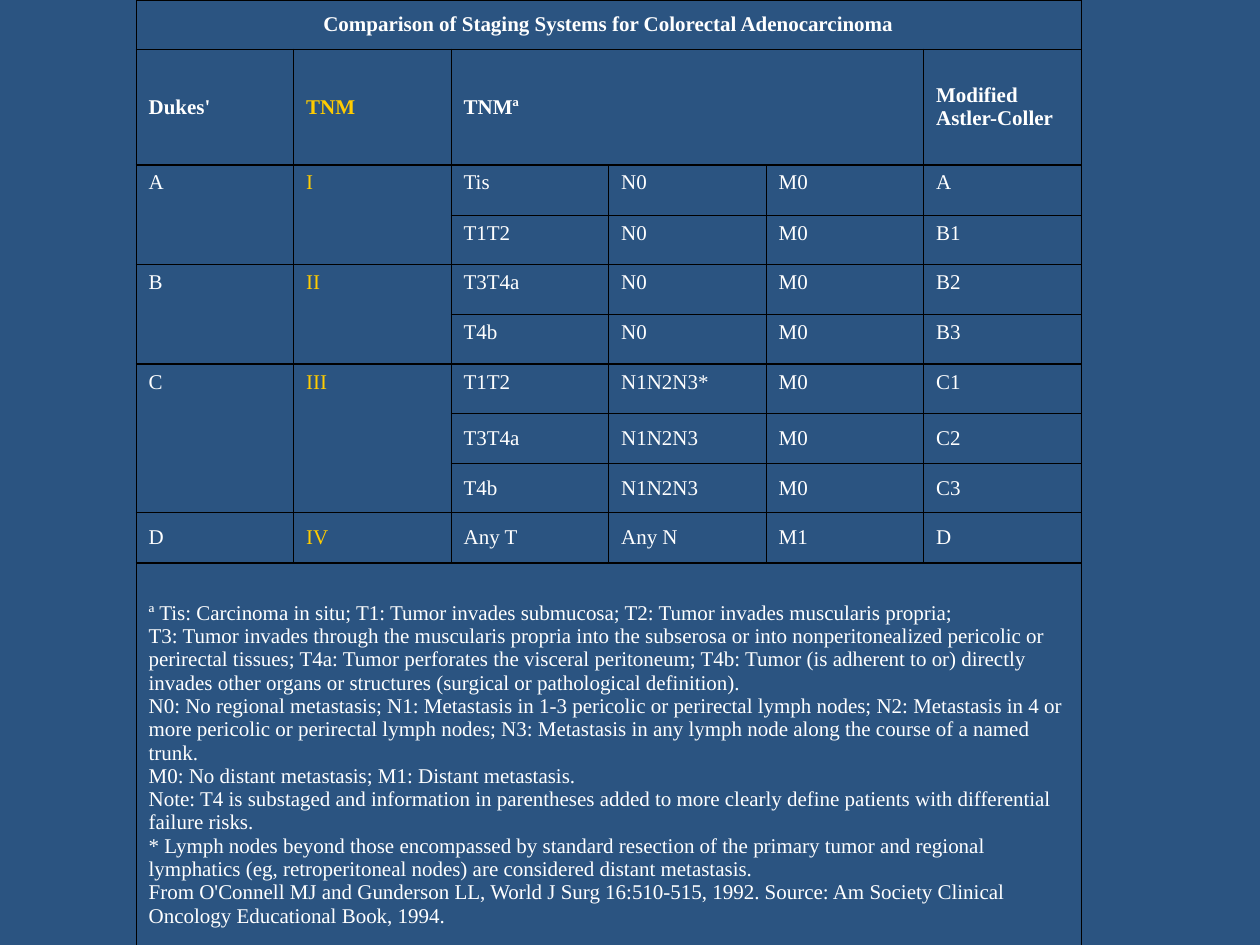
import dataclasses

import pptx
import pptx.dml.color
import pptx.enum.text
import pptx.oxml.ns
import pptx.table
import pptx.util
from lxml import etree

Inches = pptx.util.Inches
Anchor = pptx.enum.text.MSO_ANCHOR
Align = pptx.enum.text.PP_ALIGN


@dataclasses.dataclass(frozen=True)
class Theme:
    background: str = "2B5481"
    text: str = "FFFFFF"
    accent: str = "FFCC00"
    border: str = "000000"
    font: str = "Times New Roman"
    size: float = 12
    border_width: float = 0.75


@dataclasses.dataclass(frozen=True)
class Entry:
    """Content of one table cell: paragraphs, each a tuple of lines."""
    row: int
    column: int
    paragraphs: tuple[tuple[str, ...], ...]
    rows: int = 1
    columns: int = 1
    bold: bool = False
    color: str = ""
    anchor: Anchor = Anchor.MIDDLE
    align: Align = Align.LEFT


@dataclasses.dataclass(frozen=True)
class Stage:
    dukes: str
    tnm: str
    substages: tuple[tuple[str, str, str, str], ...]


THEME = Theme()
COLUMN_WIDTH = 1.25
ROW_HEIGHTS = (0.39, 0.92, 0.4, 0.39, 0.4, 0.39, 0.39, 0.4, 0.39, 0.4, 3.2)
COLUMN_COUNT = 6
FIRST_STAGE_ROW = 2
FIRST_MIDDLE_ROW = 7  # cells that start above this row sit at the top

STAGES = (
    Stage("A", "I", (("Tis", "N0", "M0", "A"), ("T1T2", "N0", "M0", "B1"))),
    Stage("B", "II", (("T3T4a", "N0", "M0", "B2"), ("T4b", "N0", "M0", "B3"))),
    Stage("C", "III", (("T1T2", "N1N2N3*", "M0", "C1"),
                       ("T3T4a", "N1N2N3", "M0", "C2"),
                       ("T4b", "N1N2N3", "M0", "C3"))),
    Stage("D", "IV", (("Any T", "Any N", "M1", "D"),)),
)

FOOTNOTES = (
    ("ª Tis: Carcinoma in situ; T1: Tumor invades submucosa; "
     "T2: Tumor invades muscularis propria;",),
    ("T3: Tumor invades through the muscularis propria into the subserosa or into "
     "nonperitonealized pericolic or perirectal tissues; T4a: Tumor perforates the "
     "visceral peritoneum; T4b: Tumor (is adherent to or) directly invades other "
     "organs or structures (surgical or pathological definition).",
     "N0: No regional metastasis; N1: Metastasis in 1-3 pericolic or perirectal "
     "lymph nodes; N2: Metastasis in 4 or more pericolic or perirectal lymph nodes; "
     "N3: Metastasis in any lymph node along the course of a named trunk.",
     "M0: No distant metastasis; M1: Distant metastasis.",
     "Note: T4 is substaged and information in parentheses added to more clearly "
     "define patients with differential failure risks.",
     "* Lymph nodes beyond those encompassed by standard resection of the primary "
     "tumor and regional lymphatics (eg, retroperitoneal nodes) are considered "
     "distant metastasis.",
     "From O'Connell MJ and Gunderson LL, World J Surg 16:510-515, 1992. Source: "
     "Am Society Clinical Oncology Educational Book, 1994."),
)


def rgb(color: str) -> pptx.dml.color.RGBColor:
    return pptx.dml.color.RGBColor.from_string(color)


def style_cell(cell: pptx.table._Cell) -> None:
    """Give a cell thin borders on all sides and no fill."""
    properties = cell._tc.get_or_add_tcPr()
    qn = pptx.oxml.ns.qn
    for side in ("a:lnL", "a:lnR", "a:lnT", "a:lnB"):
        line = etree.SubElement(properties, qn(side),
                                w=str(int(pptx.util.Pt(THEME.border_width))))
        fill = etree.SubElement(line, qn("a:solidFill"))
        etree.SubElement(fill, qn("a:srgbClr"), val=THEME.border)
    cell.fill.background()


def write_entry(table: pptx.table.Table, entry: Entry) -> None:
    cell = table.cell(entry.row, entry.column)
    if entry.rows > 1 or entry.columns > 1:
        cell.merge(table.cell(entry.row + entry.rows - 1,
                              entry.column + entry.columns - 1))
    cell.vertical_anchor = entry.anchor
    frame = cell.text_frame
    for number, lines in enumerate(entry.paragraphs):
        para = frame.add_paragraph() if number else frame.paragraphs[0]
        para.alignment = entry.align
        for line_number, line in enumerate(lines):
            if line_number:
                para.add_line_break()
            span = para.add_run()
            span.text = line
            span.font.name = THEME.font
            span.font.size = pptx.util.Pt(THEME.size)
            span.font.bold = entry.bold
            span.font.color.rgb = rgb(entry.color or THEME.text)


def heading_entries() -> list[Entry]:
    title = "Comparison of Staging Systems for Colorectal Adenocarcinoma"
    return [
        Entry(0, 0, ((title,),), columns=COLUMN_COUNT, bold=True, align=Align.CENTER),
        Entry(1, 0, (("Dukes'",),), bold=True),
        Entry(1, 1, (("TNM",),), bold=True, color=THEME.accent),
        Entry(1, 2, (("TNMª",),), columns=3, bold=True),
        Entry(1, 5, (("Modified Astler-Coller",),), bold=True),
    ]


def stage_entries() -> list[Entry]:
    entries = []
    row = FIRST_STAGE_ROW
    for stage in STAGES:
        height = len(stage.substages)
        anchor = Anchor.TOP if row < FIRST_MIDDLE_ROW else Anchor.MIDDLE
        entries.append(Entry(row, 0, ((stage.dukes,),), rows=height, anchor=anchor))
        entries.append(Entry(row, 1, ((stage.tnm,),), rows=height, anchor=anchor,
                             color=THEME.accent))
        for values in stage.substages:
            anchor = Anchor.TOP if row < FIRST_MIDDLE_ROW else Anchor.MIDDLE
            entries += [Entry(row, column, ((value,),), anchor=anchor)
                        for column, value in enumerate(values, start=2)]
            row += 1
    return entries


def main() -> None:
    deck = pptx.Presentation()
    deck.slide_width, deck.slide_height = Inches(10), Inches(7.5)
    page = deck.slides.add_slide(deck.slide_layouts[6])
    page.background.fill.solid()
    page.background.fill.fore_color.rgb = rgb(THEME.background)

    # Table grid
    table = page.shapes.add_table(
        len(ROW_HEIGHTS), COLUMN_COUNT, Inches(1.08), Inches(0),
        Inches(COLUMN_WIDTH * COLUMN_COUNT), Inches(sum(ROW_HEIGHTS))).table
    table.first_row = table.horz_banding = False
    for column in table.columns:
        column.width = Inches(COLUMN_WIDTH)
    for row, height in zip(table.rows, ROW_HEIGHTS):
        row.height = Inches(height)
    for cell in table.iter_cells():
        style_cell(cell)

    # Headings, stages and footnotes
    footnotes = Entry(len(ROW_HEIGHTS) - 1, 0, FOOTNOTES, columns=COLUMN_COUNT)
    for entry in heading_entries() + stage_entries() + [footnotes]:
        write_entry(table, entry)

    deck.save("out.pptx")


if __name__ == "__main__":
    main()
